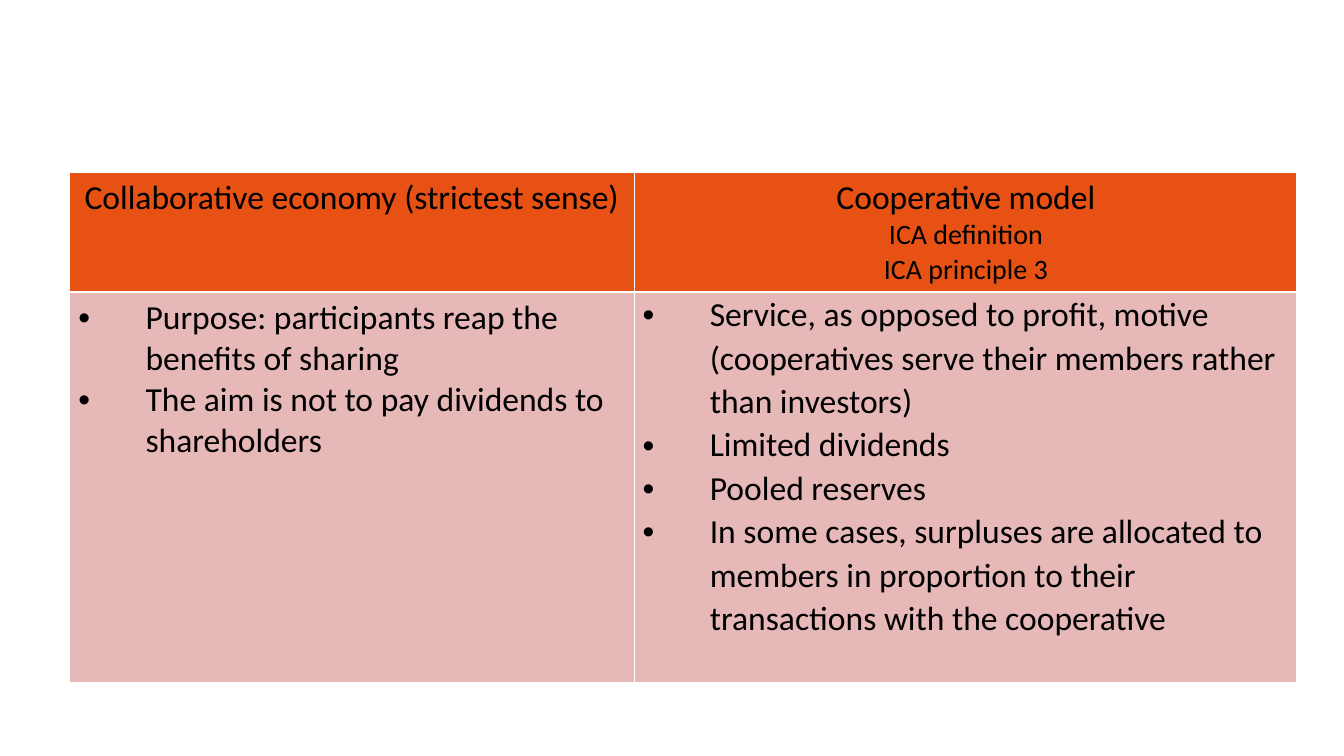
from lxml.etree import SubElement
from pptx import Presentation
from pptx.dml.color import RGBColor
from pptx.enum.text import PP_ALIGN
from pptx.oxml.ns import qn
from pptx.util import Pt

ORANGE = RGBColor(0xE7, 0x51, 0x13)
PINK = RGBColor(0xE6, 0xB9, 0xB8)
BLACK = RGBColor(0, 0, 0)
WHITE = RGBColor(0xFF, 0xFF, 0xFF)

COLS = [303, 355]
ROWS = [64, 209.5]

HEADS = [
    [("Collaborative economy (strictest sense)", 18)],
    [("Cooperative model", 18), ("ICA definition", 15), ("ICA principle 3", 15)],
]
SHARING = [
    "Purpose: participants reap the benefits of sharing",
    "The aim is not to pay dividends to shareholders",
]
COOP = [
    "Service, as opposed to profit, motive (cooperatives serve their members "
    "rather than investors)",
    "Limited dividends",
    "Pooled reserves",
    "In some cases, surpluses are allocated to members in proportion to their "
    "transactions with the cooperative",
]


def add_edges(cell):
    props = cell._tc.get_or_add_tcPr()
    for side in "LRTB":
        line = SubElement(props, qn(f"a:ln{side}"), w=str(Pt(1)))
        fill = SubElement(line, qn("a:solidFill"))
        SubElement(fill, qn("a:srgbClr"), val=str(WHITE))


def style_cell(cell, color, side, top):
    add_edges(cell)
    cell.fill.solid()
    cell.fill.fore_color.rgb = color
    cell.margin_left = cell.margin_right = Pt(side)
    cell.margin_top = cell.margin_bottom = Pt(top)


def add_para(frame, first, text):
    para = frame.paragraphs[0] if first else frame.add_paragraph()
    para.text = text
    return para


def set_font(para, size):
    font = para.font
    font.name = "Calibri"
    font.size = Pt(size)
    font.bold = False
    font.color.rgb = BLACK


def add_bullet(para):
    props = para._p.get_or_add_pPr()
    props.set("marL", str(Pt(36)))
    props.set("indent", str(Pt(-36)))
    SubElement(props, qn("a:buFont"), typeface="Arial")
    SubElement(props, qn("a:buChar"), char="•")


def fill_head(cell, lines):
    style_cell(cell, ORANGE, 5, 2.9)
    for i, (text, size) in enumerate(lines):
        para = add_para(cell.text_frame, i == 0, text)
        para.alignment = PP_ALIGN.CENTER
        set_font(para, size)


def fill_list(cell, items, side, top, space):
    style_cell(cell, PINK, side, top)
    for i, text in enumerate(items):
        para = add_para(cell.text_frame, i == 0, text)
        add_bullet(para)
        para.line_spacing = space
        set_font(para, 18)


def add_grid(slide):
    frame = slide.shapes.add_table(
        len(ROWS), len(COLS), Pt(37), Pt(92), Pt(sum(COLS)), Pt(sum(ROWS)))
    table = frame.table
    for col, width in zip(table.columns, COLS):
        col.width = Pt(width)
    for row, height in zip(table.rows, ROWS):
        row.height = Pt(height)
    return table


def main():
    deck = Presentation()
    deck.slide_width, deck.slide_height = Pt(720), Pt(405)
    slide = deck.slides.add_slide(deck.slide_layouts[6])
    table = add_grid(slide)

    # Header row
    for i, lines in enumerate(HEADS):
        fill_head(table.cell(0, i), lines)

    # Comparison lists
    fill_list(table.cell(1, 0), SHARING, 5, 2.9, 1.0)
    fill_list(table.cell(1, 1), COOP, 4.3, 0, 1.06)

    deck.save("out.pptx")


if __name__ == "__main__":
    main()
